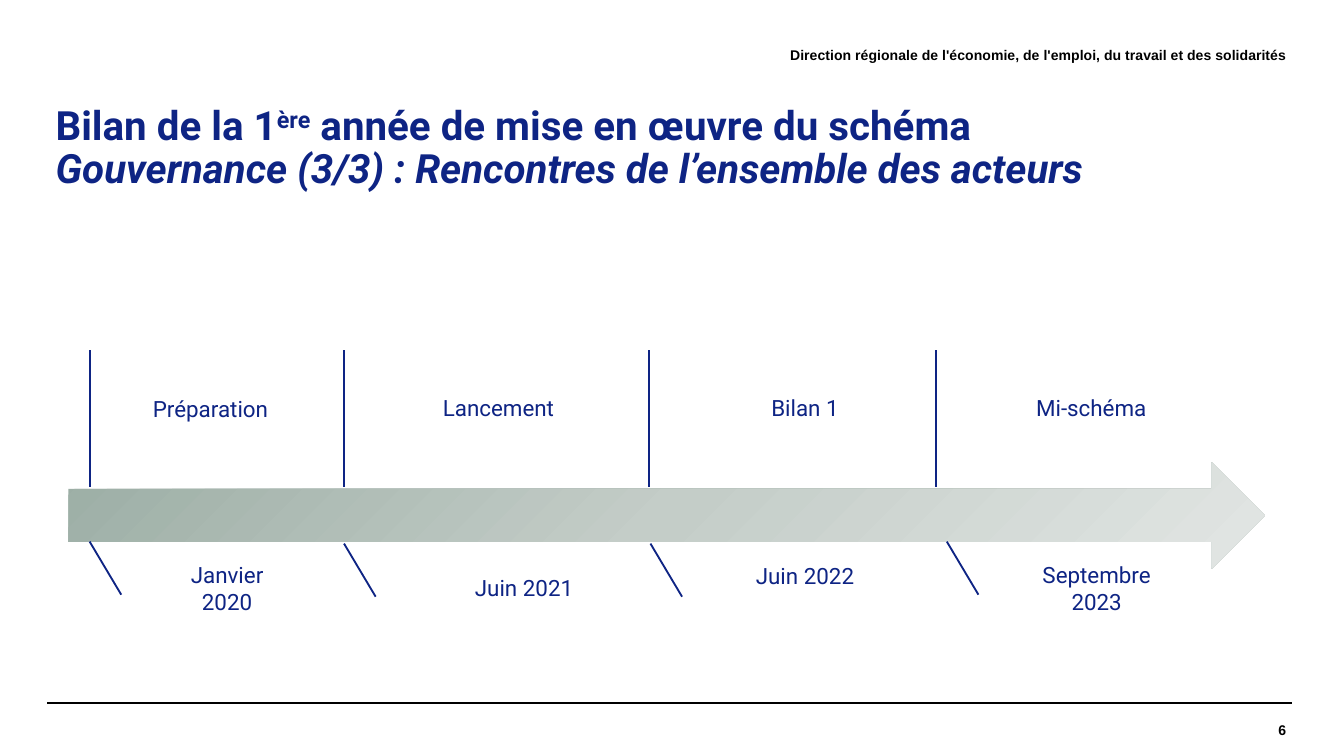
from copy import deepcopy
from dataclasses import dataclass

from lxml.etree import SubElement
from pptx import Presentation
from pptx.dml.color import RGBColor
from pptx.enum.shapes import MSO_CONNECTOR, MSO_SHAPE
from pptx.enum.text import MSO_ANCHOR, PP_ALIGN
from pptx.oxml.ns import qn
from pptx.slide import Slide
from pptx.util import Inches, Pt

NAVY = RGBColor(0x0E, 0x24, 0x84)
BLACK = RGBColor(0, 0, 0)
SHADES = (RGBColor(0x9C, 0xAE, 0xA5), RGBColor(0xC4, 0xCD, 0xC8),
          RGBColor(0xE2, 0xE6, 0xE4))

# Each step: label, label spot, date, date spot and width, post, tick
STEPS = [
    ("Préparation", (9.67, 28.9), "Janvier 2020", (12.2, 41.25, 9.4), 6.67, (6.67, 40.3)),
    ("Lancement", (31.1, 28.85), "Juin 2021", (34.3, 42.25, 9.4), 25.6, (25.6, 40.45)),
    ("Bilan 1", (53.9, 28.85), "Juin 2022", (55.2, 41.35, 9.4), 48.3, (48.4, 40.45)),
    ("Mi-schéma", (75.2, 28.85), "Septembre 2023", (76, 41.25, 11.2), 69.67, (70.45, 40.3)),
]


def cell(*sizes):
    """Turn grid units, a hundred columns across the slide, into lengths."""
    return [Inches(size / 10) for size in sizes]


@dataclass
class Board:
    slide: Slide
    font: str = "Roboto"
    color: RGBColor = NAVY

    def text(self, spot, size, align=PP_ALIGN.CENTER, pad=None, mid=False):
        """Add an empty text box and return its paragraph, ready for runs."""
        frame = self.slide.shapes.add_textbox(*cell(*spot)).text_frame
        frame.word_wrap = True
        if mid:
            frame.vertical_anchor = MSO_ANCHOR.MIDDLE
        if pad is not None:
            frame.margin_left = frame.margin_right = pad
            frame.margin_top = frame.margin_bottom = pad
        para = frame.paragraphs[0]
        para.alignment = align
        para.font.size = Pt(size)
        return para

    def run(self, para, words, bold=False, italic=False, font=None, color=None):
        run = para.add_run()
        run.text = words
        run.font.name = font or self.font
        run.font.size = para.font.size
        run.font.bold, run.font.italic = bold, italic
        run.font.color.rgb = color or self.color
        return run

    def raised(self, para, words):
        run = self.run(para, words, bold=True)
        run.font._element.set("baseline", "30000")

    def label(self, words, spot):
        self.run(self.text(spot, 12), words)

    def margin(self, words, spot):
        para = self.text(spot, 7.5, PP_ALIGN.RIGHT, pad=0, mid=True)
        self.run(para, words, bold=True, font="Arial", color=BLACK)

    def line(self, start, end, width=1, color=None):
        link = self.slide.shapes.add_connector(
            MSO_CONNECTOR.STRAIGHT, *cell(*start, *end))
        link.line.width = Pt(width)
        link.line.color.rgb = color or self.color
        SubElement(link._element.spPr, qn("a:effectLst"))

    def arrow(self, spot):
        shape = self.slide.shapes.add_shape(MSO_SHAPE.RIGHT_ARROW, *cell(*spot))
        shape.shadow.inherit = False
        shape.line.fill.background()
        fill = shape.fill
        fill.gradient()
        fill.gradient_angle = 315
        first = shape._element.spPr.find(".//" + qn("a:gs"))
        first.addnext(deepcopy(first))
        for stop, place, shade in zip(fill.gradient_stops, (0, 0.5, 1), SHADES):
            stop.position = place
            stop.color.rgb = shade


def main():
    deck = Presentation()
    deck.slide_width, deck.slide_height = cell(100, 56.25)
    board = Board(deck.slides.add_slide(deck.slide_layouts[6]))

    for left in (3.5, 3.9):
        board.line((left, 52.3), (left + 92.2, 52.3), 0.8, BLACK)
    board.margin("6", (80.9, 52.35, 14.8, 3.9))
    board.margin("Direction régionale de l'économie, de l'emploi, "
                 "du travail et des solidarités", (31.4, 2.1, 64.3, 3.9))

    title = board.text((3.15, 7.45, 92.1, 7.3), 21.6, PP_ALIGN.LEFT, mid=True)
    title.line_spacing = 0.9
    board.run(title, "Bilan de la 1", bold=True)
    board.raised(title, "ère")
    board.run(title, " année de mise en œuvre du schéma", bold=True)
    title.add_line_break()
    board.run(title, "Gouvernance (3/3) : Rencontres de l’ensemble des acteurs",
              bold=True, italic=True)

    board.arrow((5.1, 34.4, 89, 7.9))
    for name, spot, date, place, post, (left, top) in STEPS:
        board.line((post, 26.05), (post, 36.25))
        board.line((left, top), (left + 2.35, top + 3.95))
        board.label(name, (*spot, 12, 3))
        board.label(date, (*place, 5 if place[1] < 42 else 3))

    deck.save("out.pptx")


if __name__ == "__main__":
    main()
